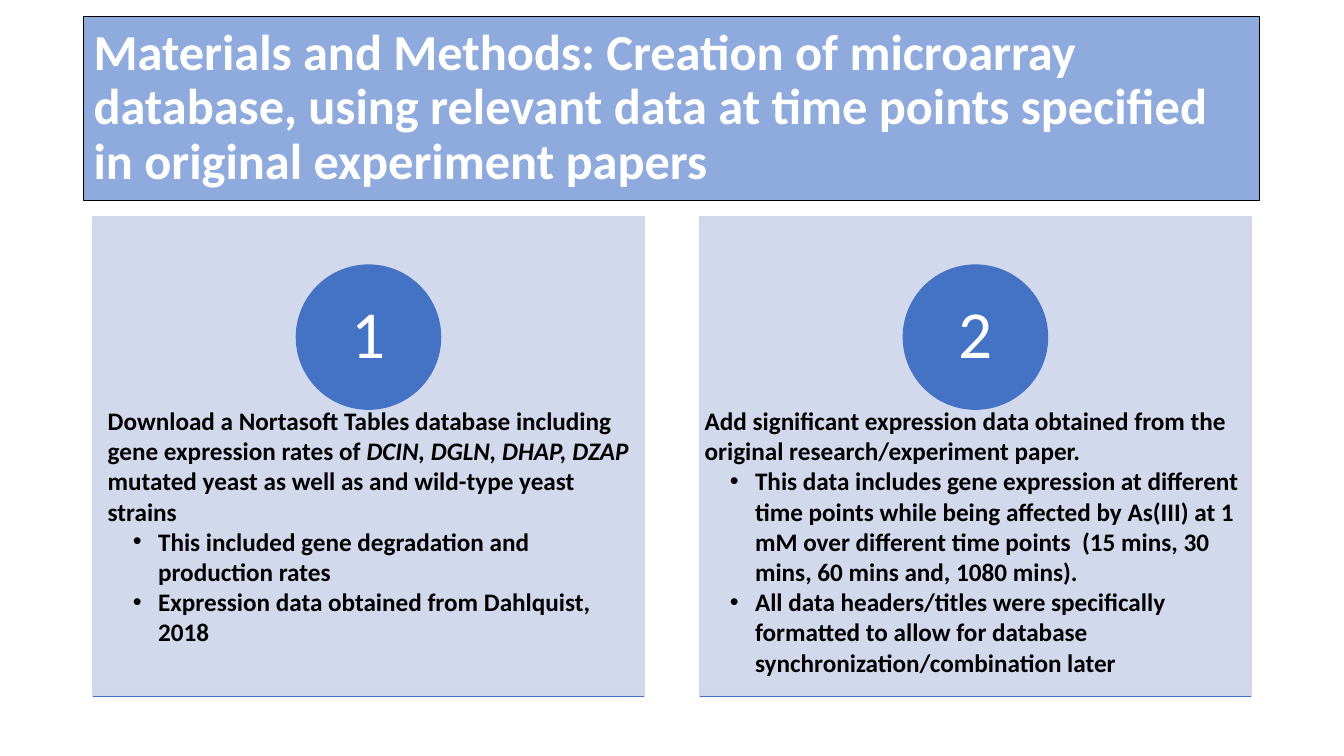
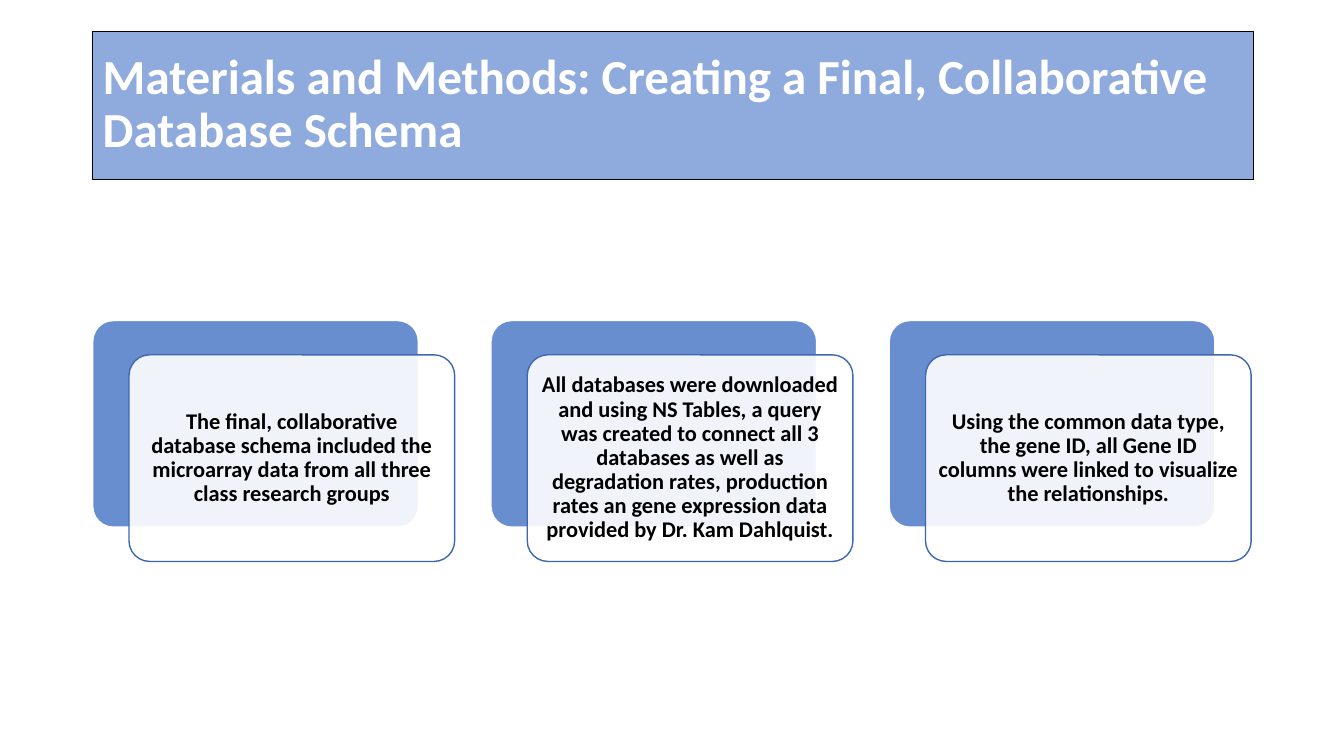
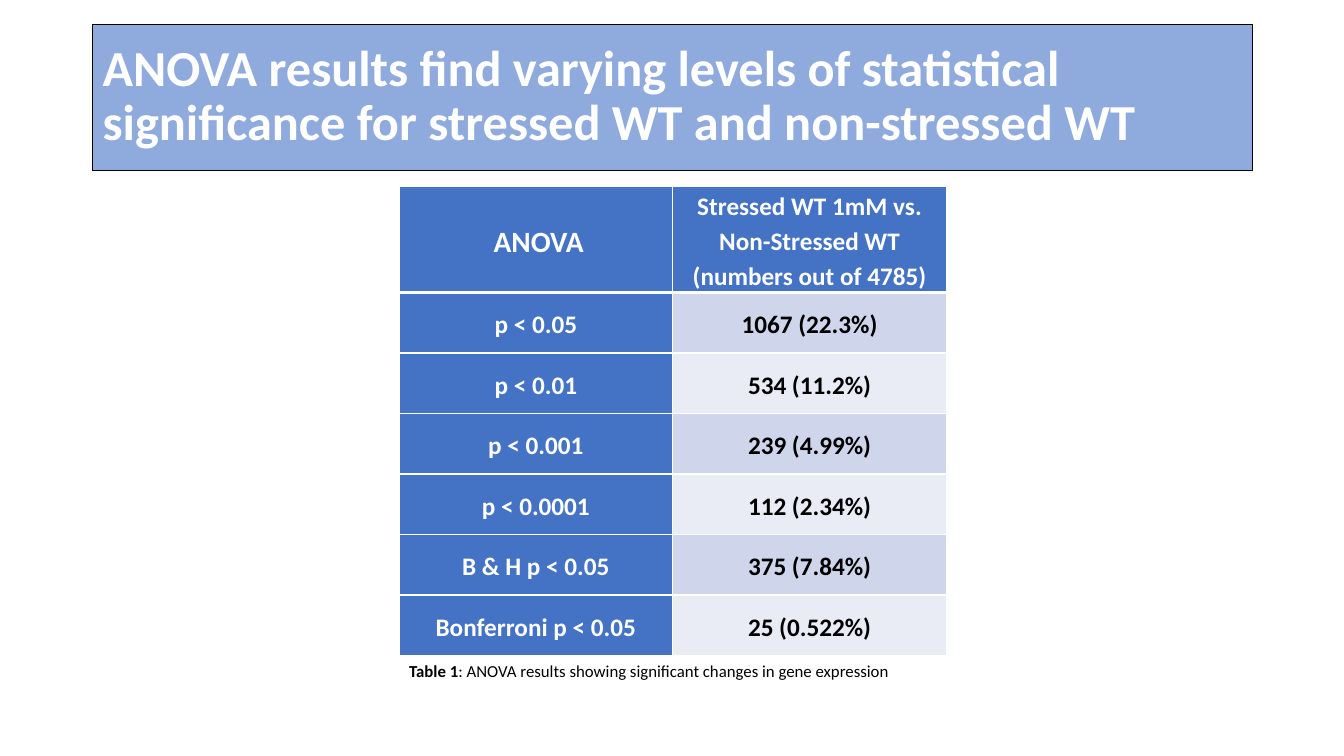
from dataclasses import dataclass

from lxml import etree
from pptx import Presentation
from pptx.dml.color import RGBColor
from pptx.enum import shapes, text
from pptx.oxml.ns import qn
from pptx.util import Inches, Pt


@dataclass(frozen=True)
class Theme:
    font: str = "Calibri"
    band: str = "8FAADC"
    blue: str = "4472C4"
    edge: str = "3E67B2"
    panel: str = "CFD5EA"
    pale: str = "E9EBF5"
    white: str = "FFFFFF"
    black: str = "000000"
    title: float = 36
    digit: float = 48
    head: float = 21
    body: float = 18
    card: float = 16
    note: float = 12


T = Theme()
KIND = shapes.MSO_SHAPE
MID = text.PP_ALIGN.CENTER

# Each paragraph is a string or a list of (text, format) runs.
TITLES = [
    ("Materials and Methods: Creation of microarray database, using relevant data "
     "at time points specified in original experiment papers",
     (0.83, 0.16, 11.66, 1.83), T.title),
    ("Materials and Methods: Creating a Final, Collaborative Database Schema",
     (0.92, 0.31, 11.51, 1.47), 35),
    ("ANOVA results find varying levels of statistical significance for "
     "stressed WT and non-stressed WT",
     (0.92, 0.24, 11.5, 1.45), T.title),
]
STEPS = [
    ((0.97, 5.43),
     [("Download a Nortasoft Tables database including gene expression rates of ", {}),
      ("DCIN, DGLN, DHAP, DZAP ", {"italic": True}),
      ("mutated yeast as well as and wild-type yeast strains", {})],
     ["This included gene degradation and production rates",
      "Expression data obtained from Dahlquist, 2018"]),
    ((6.89, 5.68),
     "Add significant expression data obtained from the original "
     "research/experiment paper.",
     ["This data includes gene expression at different time points while being "
      "affected by As(III) at 1 mM over different time points  (15 mins, 30 mins, "
      "60 mins and, 1080 mins).",
      "All data headers/titles were specifically formatted to allow for database "
      "synchronization/combination later"]),
]
CARDS = [
    "The final, collaborative database schema included the microarray data from "
    "all three class research groups",
    "All databases were downloaded and using NS Tables, a query was created to "
    "connect all 3 databases as well as degradation rates, production rates an "
    "gene expression data provided by Dr. Kam Dahlquist.",
    "Using the common data type, the gene ID, all Gene ID columns were linked to "
    "visualize the relationships.",
]
HEADS = [
    [[(" ", {}), ("ANOVA", {"size": T.head})]],
    ["Stressed WT 1mM vs. Non-Stressed WT", "(numbers out of 4785)"],
]
ROWS = [
    ("p < 0.05", "1067 (22.3%)"),
    ("p < 0.01", "534 (11.2%)"),
    ("p < 0.001", "239 (4.99%)"),
    ("p < 0.0001", "112 (2.34%)"),
    ("B & H p < 0.05", "375 (7.84%)"),
    ("Bonferroni p < 0.05", "25 (0.522%)"),
]
NOTE = [("Table 1", {"bold": True}),
        (": ANOVA results showing significant changes in gene expression", {})]


def rgb(code):
    return RGBColor.from_string(code)


def write(frame, paras, size=T.body, color=T.black, bold=True, align=None,
          space=None, pad=None, anchor=None, bullets=False):
    """Fill a text frame; with bullets, every paragraph after the first has one."""
    frame.word_wrap = True
    if anchor:
        frame.vertical_anchor = anchor
    if pad:
        frame.margin_left = frame.margin_right = Inches(pad[0])
        frame.margin_top = frame.margin_bottom = Inches(pad[1])
    for i, runs in enumerate(paras):
        para = frame.add_paragraph() if i else frame.paragraphs[0]
        para.alignment = align or text.PP_ALIGN.LEFT
        if space:
            para.line_spacing = space
        if bullets and i:
            para.level = 1
            props = para._p.get_or_add_pPr()
            props.set("marL", str(Inches(0.5)))
            props.set("indent", str(-Inches(0.25)))
            etree.SubElement(props, qn("a:buFont")).set("typeface", "Arial")
            etree.SubElement(props, qn("a:buChar")).set("char", "•")
        for words, style in [(runs, {})] if isinstance(runs, str) else runs:
            run = para.add_run()
            run.text = words
            font = run.font
            font.name = T.font
            font.size = Pt(style.get("size", size))
            font.bold = style.get("bold", bold)
            font.italic = style.get("italic", False)
            font.color.rgb = rgb(color)


def shape(slide, kind, box, fill, line, width=1, alpha=None, fade=False):
    """Add a filled shape; alpha is its opacity in percent, fade applies it to the line."""
    item = slide.shapes.add_shape(kind, *map(Inches, box))
    item.shadow.inherit = False
    item.fill.solid()
    item.fill.fore_color.rgb = rgb(fill)
    item.line.color.rgb = rgb(line)
    item.line.width = Pt(width)
    if alpha:
        tones = list(item.element.spPr.iter(qn("a:srgbClr")))
        for tone in tones if fade else tones[:1]:
            etree.SubElement(tone, qn("a:alpha")).set("val", str(alpha * 1000))
    return item


def label(slide, box, paras, **style):
    item = slide.shapes.add_textbox(*map(Inches, box))
    write(item.text_frame, paras, **style)


def rule(slide, left, top, width):
    line = slide.shapes.add_connector(
        shapes.MSO_CONNECTOR.STRAIGHT,
        Inches(left), Inches(top), Inches(left + width), Inches(top))
    line.line.color.rgb = rgb(T.blue)
    line.line.width = Pt(1)
    etree.SubElement(line.element.spPr, qn("a:effectLst"))


def start(deck, index):
    """Add a blank slide with its title band."""
    slide = deck.slides.add_slide(deck.slide_layouts[6])
    words, box, size = TITLES[index]
    band = shape(slide, KIND.RECTANGLE, box, T.band, T.black, 0.75)
    write(band.text_frame, [words], size=size, color=T.white, space=0.9,
          anchor=text.MSO_ANCHOR.MIDDLE)
    return slide


def steps(deck):
    slide = start(deck, 0)
    top, wide, high, disc = 2.15, 5.47, 4.76, 1.43
    for i, ((left, span), lead, points) in enumerate(STEPS):
        x = 0.92 + i * 6.02
        shape(slide, KIND.RECTANGLE, (x, top, wide, high), T.panel, T.panel,
              alpha=90, fade=True)
        dot = shape(slide, KIND.OVAL,
                    (x + (wide - disc) / 2, top + 0.48, disc, disc), T.blue, T.blue)
        write(dot.text_frame, [str(i + 1)], size=T.digit, color=T.white, bold=False,
              align=MID, space=0.9, pad=(0.11, 0.01), anchor=text.MSO_ANCHOR.MIDDLE)
        rule(slide, x, top + high, wide)
        label(slide, (left, 3.97, span, 2.83), [lead, *points], bullets=True)


def cards(deck):
    slide = start(deck, 1)
    wide, high, shift = 3.23, 2.05, (0.36, 0.34)
    for i, words in enumerate(CARDS):
        x, y = 0.92 + i * 3.95, 3.18
        back = shape(slide, KIND.ROUNDED_RECTANGLE, (x, y, wide, high),
                     T.blue, T.white, alpha=80)
        front = shape(slide, KIND.ROUNDED_RECTANGLE,
                      (x + shift[0], y + shift[1], wide, high),
                      T.white, T.edge, alpha=90)
        for item in (back, front):
            item.adjustments[0] = 0.1
        write(front.text_frame, [words], size=T.card, align=MID, space=0.9,
              pad=(0.07, 0.07), anchor=text.MSO_ANCHOR.MIDDLE)


def cell(item, paras, fill, color, base=1):
    """Format a table cell; base is the width of its bottom border."""
    props = item._tc.get_or_add_tcPr()
    for side, width in zip("LRTB", (1, 1, 1, base)):
        line = etree.SubElement(props, qn("a:ln" + side), w=str(Pt(width)))
        tone = etree.SubElement(line, qn("a:solidFill"))
        etree.SubElement(tone, qn("a:srgbClr")).set("val", T.white)
    item.fill.solid()
    item.fill.fore_color.rgb = rgb(fill)
    item.margin_left = item.margin_right = item.margin_top = item.margin_bottom = 0
    item.vertical_anchor = text.MSO_ANCHOR.MIDDLE
    write(item.text_frame, paras, color=color, align=MID, space=1.15)


def results(deck):
    slide = start(deck, 2)
    grid = slide.shapes.add_table(len(ROWS) + 1, 2, Inches(3.96), Inches(1.85),
                                  Inches(5.43), Inches(4.46)).table
    for col, width in zip(grid.columns, (2.71, 2.72)):
        col.width = Inches(width)
    for i, row in enumerate(grid.rows):
        row.height = Inches(0.6 if i else 0.86)
    for c, paras in enumerate(HEADS):
        cell(grid.cell(0, c), paras, T.blue, T.white, base=3)
    for r, (test, count) in enumerate(ROWS, 1):
        cell(grid.cell(r, 0), [test], T.blue, T.white)
        cell(grid.cell(r, 1), [count], T.panel if r % 2 else T.pale, T.black)
    label(slide, (3.96, 6.51, 5.42, 0.3), [NOTE], size=T.note, bold=False)


def main():
    deck = Presentation()
    deck.slide_width, deck.slide_height = Inches(13.33), Inches(7.5)
    for build in (steps, cards, results):
        build(deck)
    deck.save("out.pptx")


if __name__ == "__main__":
    main()
